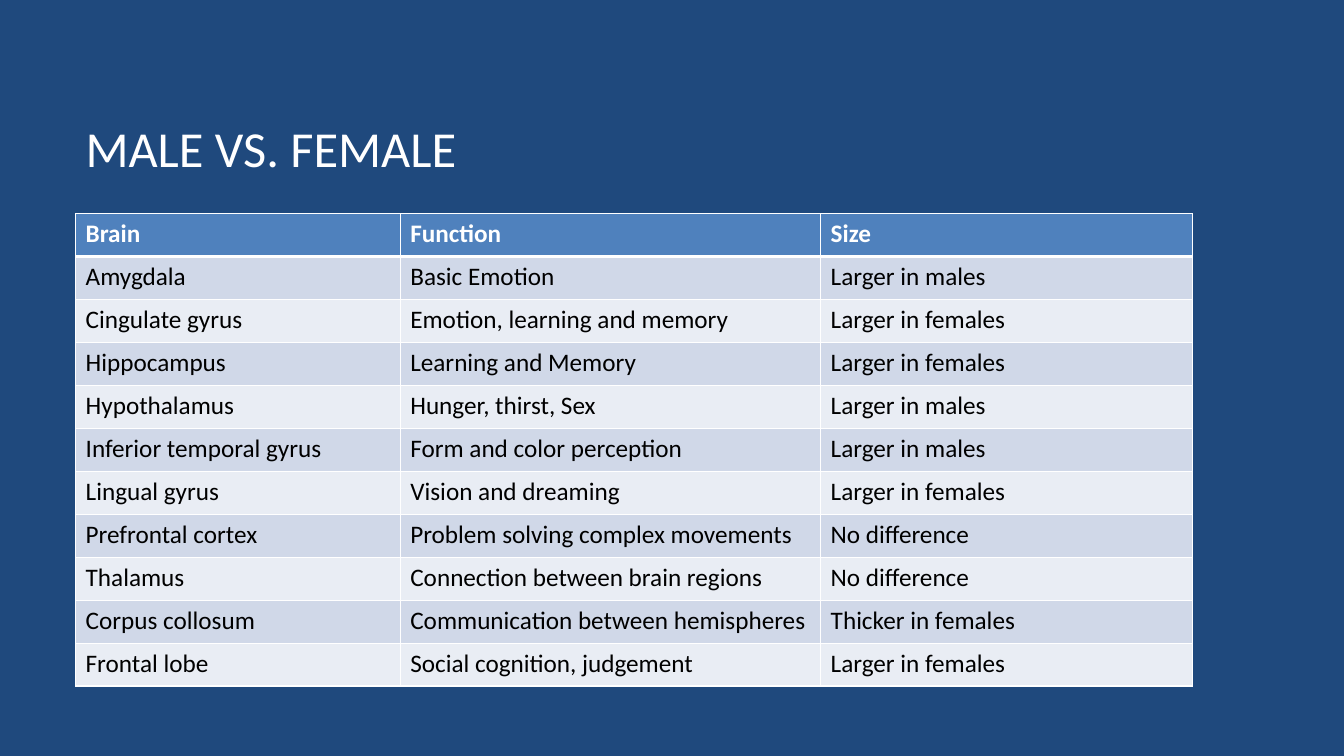
from pptx import Presentation
from pptx.dml.color import RGBColor as RGB
from pptx.enum.text import MSO_ANCHOR
from pptx.oxml import parse_xml
from pptx.oxml.ns import nsdecls
from pptx.util import Inches, Pt

THEME = {
    "font": "Calibri",
    "background": "1F497D",
    "header": "4F81BD",
    "bands": ["D0D8E8", "E9EDF4"],
    "light": "FFFFFF",
    "dark": "000000",
    "title_size": 36,
    "table_size": 18,
}

ROWS = [
    ("Brain", "Function", "Size"),
    ("Amygdala", "Basic Emotion", "Larger in males"),
    ("Cingulate gyrus", "Emotion, learning and memory", "Larger in females"),
    ("Hippocampus", "Learning and Memory", "Larger in females"),
    ("Hypothalamus", "Hunger, thirst, Sex", "Larger in males"),
    ("Inferior temporal gyrus", "Form and color perception", "Larger in males"),
    ("Lingual gyrus", "Vision and dreaming", "Larger in females"),
    ("Prefrontal cortex", "Problem solving complex movements", "No difference"),
    ("Thalamus", "Connection between brain regions", "No difference"),
    ("Corpus collosum", "Communication between hemispheres", "Thicker in females"),
    ("Frontal lobe", "Social cognition, judgement", "Larger in females"),
]
COLUMN_WIDTHS = [3.22, 4.17, 3.69]
LEFT, WIDTH = Inches(0.75), Inches(11.08)


def write(tf, text, size, color, bold=False):
    r = tf.paragraphs[0].add_run()
    r.text = text
    r.font.name = THEME["font"]
    r.font.size = Pt(size)
    r.font.bold = bold
    r.font.color.rgb = RGB.from_string(color)


def add_border(cell, side, width):
    cell._tc.get_or_add_tcPr().append(parse_xml(
        f'<a:ln{side} {nsdecls("a")} w="{Pt(width)}"><a:solidFill>'
        f'<a:srgbClr val="{THEME["light"]}"/></a:solidFill></a:ln{side}>'))


prs = Presentation()
prs.slide_width, prs.slide_height = Inches(13.33), Inches(7.5)
s = prs.slides.add_slide(prs.slide_layouts[6])
s.background.fill.solid()
s.background.fill.fore_color.rgb = RGB.from_string(THEME["background"])

title = s.shapes.add_textbox(LEFT, Inches(0.67), WIDTH, Inches(1.59))
tf = title.text_frame
tf.word_wrap = True
tf.vertical_anchor = MSO_ANCHOR.MIDDLE
write(tf, "MALE VS. FEMALE", THEME["title_size"], THEME["light"])

table = s.shapes.add_table(len(ROWS), len(COLUMN_WIDTHS), LEFT, Inches(2.12),
                           WIDTH, Inches(4.69)).table
for column, width in zip(table.columns, COLUMN_WIDTHS):
    column.width = Inches(width)

for i, row in enumerate(ROWS):
    header = i == 0
    fill = THEME["header"] if header else THEME["bands"][(i - 1) % 2]
    color = THEME["light"] if header else THEME["dark"]
    for j, text in enumerate(row):
        cell = table.cell(i, j)
        write(cell.text_frame, text, THEME["table_size"], color, header)
        add_border(cell, "L", 1)
        add_border(cell, "R", 1)
        add_border(cell, "T", 3 if i == 1 else 1)
        add_border(cell, "B", 3 if header else 1)
        cell.fill.solid()
        cell.fill.fore_color.rgb = RGB.from_string(fill)

prs.save("out.pptx")
